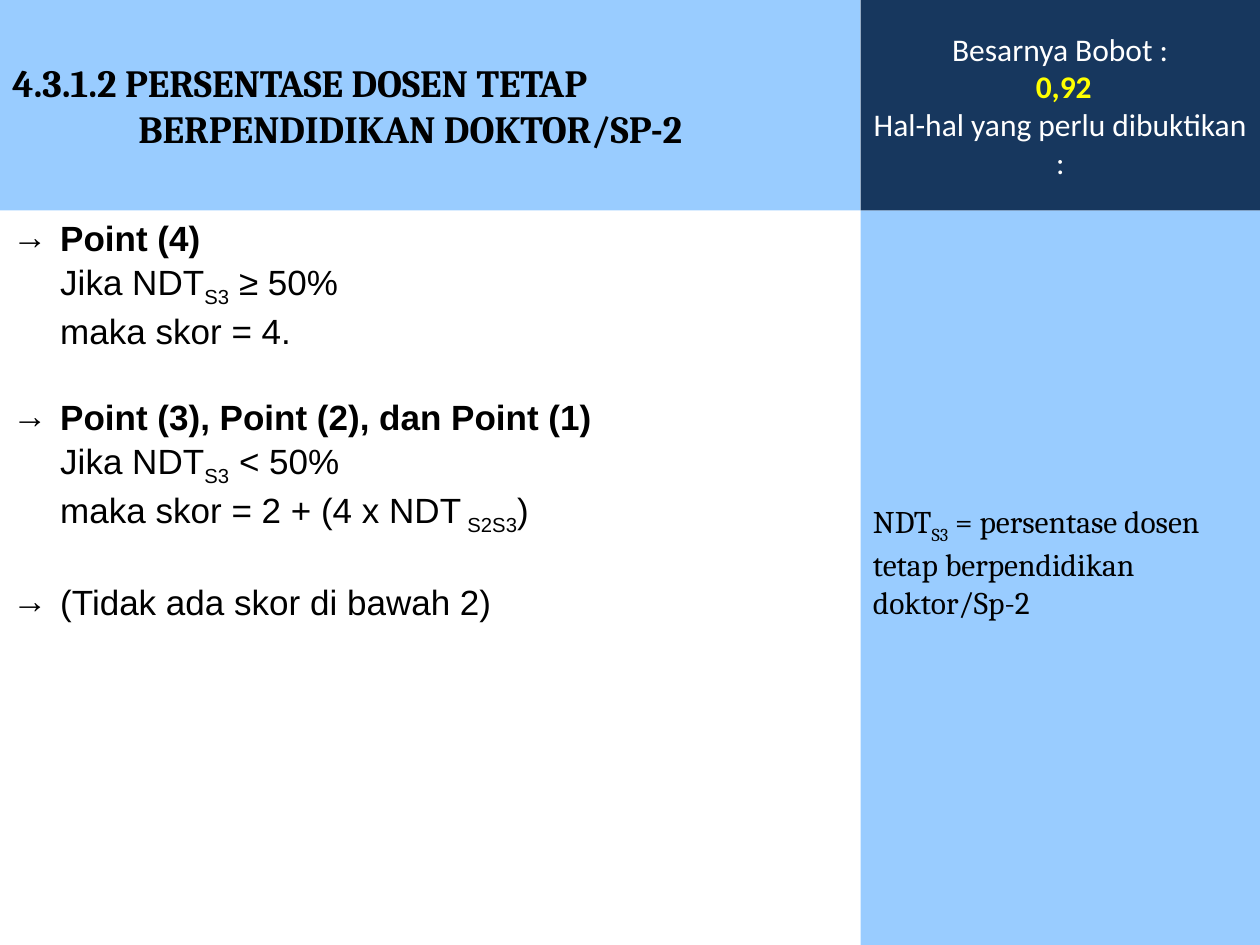
from lxml.etree import SubElement
from pptx import Presentation
from pptx.dml.color import RGBColor
from pptx.enum.shapes import MSO_SHAPE as Shape
from pptx.enum.text import MSO_ANCHOR as Anchor, PP_ALIGN as Align
from pptx.oxml.ns import qn
from pptx.util import Inches, Pt

SKY = RGBColor(0x99, 0xCC, 0xFF)
NAVY = RGBColor(0x17, 0x37, 0x5E)
BLACK = RGBColor(0, 0, 0)
WHITE = RGBColor(0xFF, 0xFF, 0xFF)
YELLOW = RGBColor(0xFF, 0xFF, 0)

SPLIT_X, SPLIT_Y = 6.83, 1.67
WIDTH, HEIGHT = 10, 7.5

# Each rule: heading, heading is bold, lines of (text, is subscript) pieces
SCORE_RULES = [
    ("Point (4)", True, [
        [("Jika NDT", False), ("S3", True), (" ≥ 50%", False)],
        [("maka skor = 4.", False)],
    ]),
    ("Point (3), Point (2), dan Point (1)", True, [
        [("Jika NDT", False), ("S3", True), (" < 50%", False)],
        [("maka skor = 2 + (4 x NDT", False), (" S2S3", True), (")", False)],
    ]),
    ("(Tidak ada skor di bawah 2)", False, []),
]


def add_run(paragraph, text, font, size, color=BLACK, bold=False, subscript=False):
    run = paragraph.add_run()
    run.text = text
    run.font.name, run.font.size = font, Pt(size)
    run.font.color.rgb, run.font.bold = color, bold
    if subscript:
        run.font._element.set("baseline", "-25000")


def set_indent(paragraph, left, hanging=0, bullet=None):
    properties = paragraph._p.get_or_add_pPr()
    properties.set("marL", str(Inches(left)))
    properties.set("indent", str(-Inches(hanging)))
    if bullet:
        SubElement(properties, qn("a:buFont")).set("typeface", "Arial")
        SubElement(properties, qn("a:buChar")).set("char", bullet)


def add_panel(slide, box, fill):
    """Draw a borderless filled rectangle and return its text frame."""
    panel = slide.shapes.add_shape(Shape.RECTANGLE, *map(Inches, box))
    panel.shadow.inherit = False
    panel.fill.solid()
    panel.fill.fore_color.rgb = fill
    panel.line.fill.background()
    frame = panel.text_frame
    frame.word_wrap = True
    frame.vertical_anchor = Anchor.MIDDLE
    frame.paragraphs[0].alignment = Align.LEFT
    return frame


def add_score_rules(slide, box):
    frame = slide.shapes.add_textbox(*map(Inches, box)).text_frame
    frame.word_wrap = True
    for index, (heading, bold, lines) in enumerate(SCORE_RULES):
        title = frame.add_paragraph() if index else frame.paragraphs[0]
        title.space_before = Pt(25 if index else 1)
        set_indent(title, 0.38, 0.38, "→")
        add_run(title, heading, "Arial", 20, bold=bold)
        for pieces in lines:
            line = frame.add_paragraph()
            line.space_before = Pt(1)
            set_indent(line, 0.38)
            for text, subscript in pieces:
                add_run(line, text, "Arial", 20, subscript=subscript)


def add_title(slide, box):
    title = add_panel(slide, box, SKY).paragraphs[0]
    set_indent(title, 1, 1)
    add_run(title, "4.3.1.2 PERSENTASE DOSEN TETAP BERPENDIDIKAN DOKTOR/SP-2",
            "Cambria", 22, bold=True)


def add_definition(slide, box):
    frame = add_panel(slide, box, SKY)
    frame.margin_bottom = Inches(0.31)
    definition = frame.paragraphs[0]
    add_run(definition, "NDT", "Cambria", 18)
    add_run(definition, "S3", "Cambria", 18, subscript=True)
    add_run(definition, " = persentase dosen tetap berpendidikan doktor/Sp-2",
            "Cambria", 18)


def add_weight(slide, box):
    frame = add_panel(slide, box, NAVY)
    label, value, evidence = (frame.paragraphs[0], frame.add_paragraph(),
                              frame.add_paragraph())
    add_run(label, "Besarnya Bobot :", "Calibri", 18, WHITE)
    add_run(value, " 0,92", "Calibri", 18, YELLOW, bold=True)
    add_run(evidence, "Hal-hal yang perlu dibuktikan :", "Calibri", 18, WHITE)
    for paragraph in frame.paragraphs:
        paragraph.alignment = Align.CENTER


def main():
    deck = Presentation()
    deck.slide_width, deck.slide_height = Inches(WIDTH), Inches(HEIGHT)
    slide = deck.slides.add_slide(deck.slide_layouts[6])
    side_width, body_height = WIDTH - SPLIT_X, HEIGHT - SPLIT_Y
    add_score_rules(slide, (0, SPLIT_Y, SPLIT_X, body_height))
    add_title(slide, (0, 0, SPLIT_X, SPLIT_Y))
    add_definition(slide, (SPLIT_X, SPLIT_Y, side_width, body_height))
    add_weight(slide, (SPLIT_X, 0, side_width, SPLIT_Y))
    deck.save("out.pptx")


if __name__ == "__main__":
    main()
